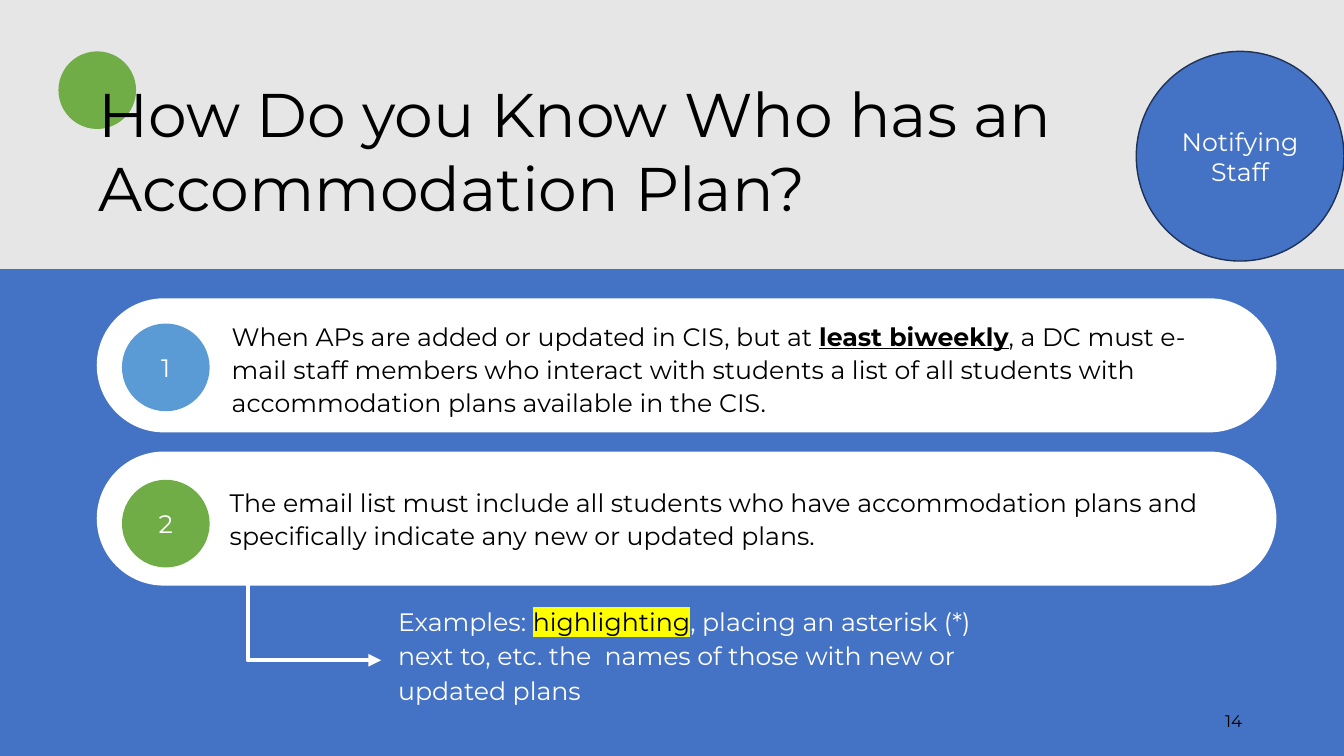
from dataclasses import dataclass

from lxml.etree import SubElement
from pptx import Presentation
from pptx.dml.color import RGBColor
from pptx.enum.shapes import MSO_CONNECTOR as Link, MSO_SHAPE as Kind
from pptx.enum.text import MSO_ANCHOR as Anchor, PP_ALIGN as Align
from pptx.oxml.ns import qn
from pptx.util import Inches, Pt

FONT = "Montserrat"
BLACK, WHITE, GRAY = "000000", "FFFFFF", "E7E6E6"
BLUE, SKY, GREEN, NAVY = "4472C4", "5B9BD5", "70AD47", "1E3256"
YELLOW = "FFFF00"

Box = tuple[float, float, float, float]


@dataclass
class Phrase:
    text: str
    bold: bool = False
    color: str = ""
    mark: str = ""


@dataclass
class Step:
    top: float
    disc: float
    color: str
    box: Box
    words: list[Phrase]


STEPS = [
    Step(2.96, 3.21, SKY, (2.2, 3.11, 9.89, 1.07), [
        Phrase("When APs are added or updated in CIS, but at "),
        Phrase("least biweekly", bold=True),
        Phrase(", a DC must e-mail staff members who interact with students "
               "a list of all students with accommodation plans available in the CIS."),
    ]),
    Step(4.48, 4.76, GREEN, (2.18, 4.76, 9.89, 0.74), [
        Phrase("The email list must include all students who have accommodation "
               "plans and specifically indicate any new or updated plans."),
    ]),
]

EXAMPLES = [
    Phrase("Examples: "),
    Phrase("highlighting", color=BLACK, mark=YELLOW),
    Phrase(", placing an asterisk (*) next to, etc. the  names of those "
           "with new or updated plans"),
]


def rgb(color: str) -> RGBColor:
    return RGBColor.from_string(color)


def write(shape, words: list[Phrase], size: float = 18, color: str = BLACK,
          align=Align.LEFT, anchor=Anchor.TOP, lead: float = 1, gap: float = 0) -> None:
    frame = shape.text_frame
    frame.word_wrap = True
    frame.vertical_anchor = anchor
    para = frame.paragraphs[0]
    para.alignment, para.line_spacing, para.space_before = align, lead, Pt(gap)
    for phrase in words:
        run = para.add_run()
        run.text = phrase.text
        font = run.font
        font.name, font.size = FONT, Pt(size)
        font.bold = font.underline = phrase.bold
        font.color.rgb = rgb(phrase.color or color)
        if phrase.mark:
            mark_run(run, phrase.mark)


def mark_run(run, color: str) -> None:
    """Highlight a run; the schema wants the element right after the fill."""
    props = run.font._element
    mark = SubElement(props, qn("a:highlight"))
    SubElement(mark, qn("a:srgbClr"), val=color)
    props.find(qn("a:solidFill")).addnext(mark)


def add_text(slide, box: Box, words: list[Phrase], **style) -> None:
    write(slide.shapes.add_textbox(*map(Inches, box)), words, **style)


def add_form(slide, kind, box: Box, fill: str, line: str = "", label: str = ""):
    shape = slide.shapes.add_shape(kind, *map(Inches, box))
    shape.shadow.inherit = False
    shape.fill.solid()
    shape.fill.fore_color.rgb = rgb(fill)
    if line:
        shape.line.color.rgb = rgb(line)
        shape.line.width = Pt(1)
    else:
        shape.line.fill.background()
    if label:
        write(shape, [Phrase(label)], color=WHITE, align=Align.CENTER, anchor=Anchor.MIDDLE)
    return shape


def add_step(slide, num: int, step: Step) -> None:
    pill = add_form(slide, Kind.ROUNDED_RECTANGLE, (0.96, step.top, 11.7, 1.33), WHITE)
    pill.adjustments[0] = 0.5
    add_form(slide, Kind.OVAL, (1.21, step.disc, 0.87, 0.87), step.color, label=str(num))
    add_text(slide, step.box, step.words, lead=1.09, gap=6)


def add_arrow(slide) -> None:
    """Draw the bent arrow that leaves step 2 and points at the examples."""
    ends = map(Inches, (2.57, 5.57, 3.78, 6.55))
    arrow = slide.shapes.add_connector(Link.ELBOW, *ends)
    arrow.line.color.rgb = rgb(WHITE)
    arrow.line.width = Pt(3)
    props = arrow._element.spPr
    geom = props.find(qn("a:prstGeom"))
    bends = geom.find(qn("a:avLst"))
    if bends is None:
        bends = SubElement(geom, qn("a:avLst"))
    SubElement(bends, qn("a:gd"), name="adj1", fmla="val -9300")
    SubElement(props.find(qn("a:ln")), qn("a:tailEnd"), type="triangle")
    SubElement(props, qn("a:effectLst"))


def main() -> None:
    deck = Presentation()
    deck.slide_width, deck.slide_height = Inches(13.33), Inches(7.5)
    slide = deck.slides.add_slide(deck.slide_layouts[6])
    back = slide.background.fill
    back.solid()
    back.fore_color.rgb = rgb(GRAY)

    add_form(slide, Kind.RECTANGLE, (0, 2.67, 13.33, 4.83), BLUE)
    add_form(slide, Kind.OVAL, (0.58, 0.51, 0.77, 0.77), GREEN)
    title = [Phrase("How Do you Know Who has an Accommodation Plan?")]
    add_text(slide, (0.88, 0.7, 11.82, 1.58), title, size=44)
    for num, step in enumerate(STEPS, 1):
        add_step(slide, num, step)
    add_text(slide, (3.85, 5.92, 6.31, 1.11), EXAMPLES, color=WHITE, lead=1.14, gap=6)
    add_arrow(slide)
    add_form(slide, Kind.OVAL, (11.27, 0.51, 2.06, 2.08), BLUE, NAVY, "Notifying Staff")
    add_text(slide, (9.42, 6.95, 3, 0.4), [Phrase("14")], size=12,
             align=Align.RIGHT, anchor=Anchor.MIDDLE)
    deck.save("out.pptx")


if __name__ == "__main__":
    main()
